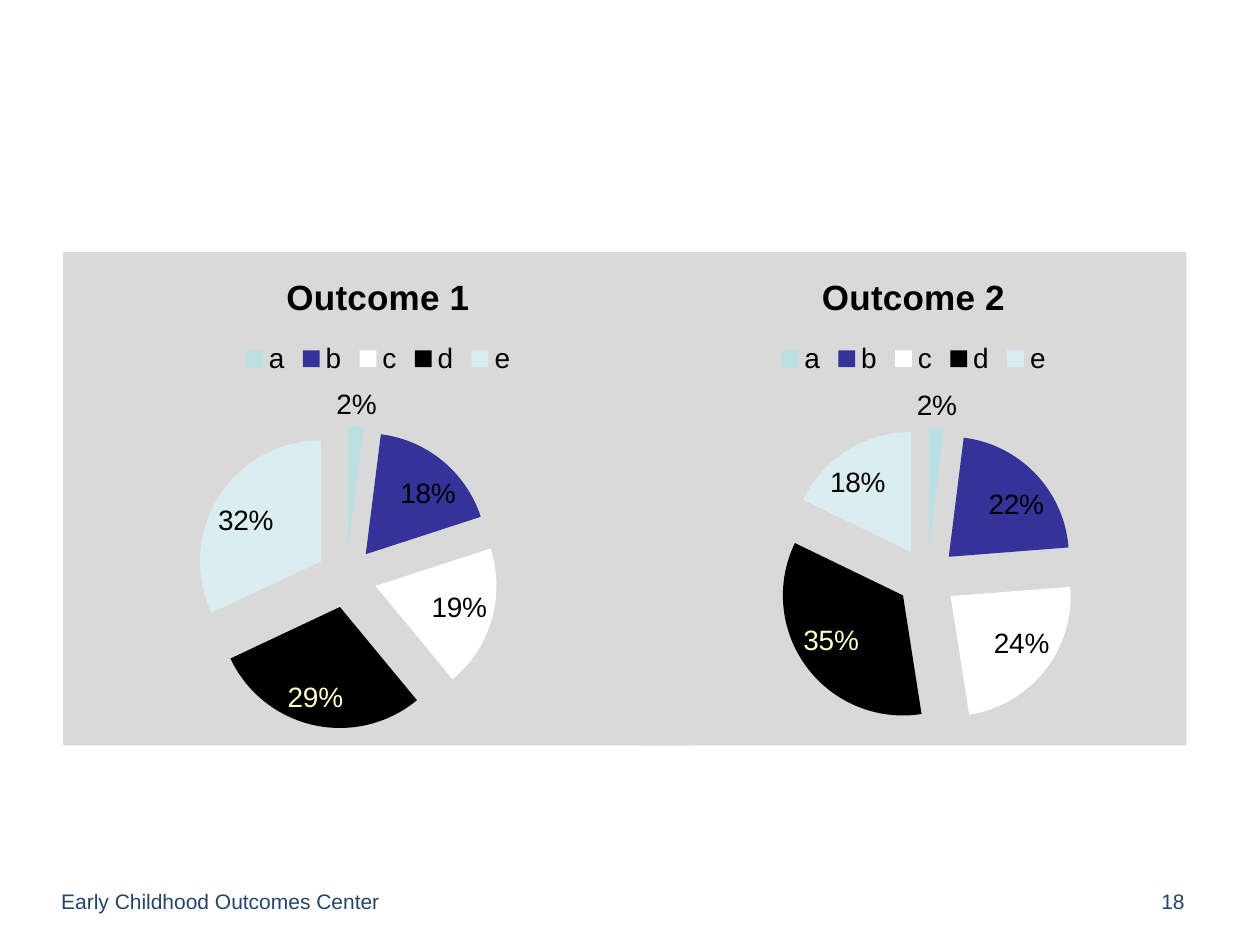
from dataclasses import dataclass

import pptx
import pptx.chart.data
import pptx.dml.color
import pptx.enum.chart
import pptx.enum.text
import pptx.oxml
import pptx.oxml.ns
import pptx.util

Pt = pptx.util.Pt
RGB = pptx.dml.color.RGBColor
Position = pptx.enum.chart.XL_LABEL_POSITION
Align = pptx.enum.text.PP_ALIGN
qn = pptx.oxml.ns.qn

FONT = "Arial"
BLACK = RGB(0x00, 0x00, 0x00)
CREAM = RGB(0xFF, 0xFF, 0xCC)
PANEL_GREY = RGB(0xD9, 0xD9, 0xD9)
FOOTER_BLUE = RGB(0x22, 0x45, 0x68)
SLICE_COLOURS = (
    RGB(0xBB, 0xE0, 0xE3),
    RGB(0x33, 0x33, 0x99),
    RGB(0xFF, 0xFF, 0xFF),
    BLACK,
    RGB(0xDA, 0xED, 0xEF),
)
CATEGORIES = ("a", "b", "c", "d", "e")
DARK_SLICE = CATEGORIES.index("d")
EXPLOSION = 25
CHART_TOP, CHART_HEIGHT = 144, 282
FOOTER_TOP, FOOTER_HEIGHT = 500.4, 28.8


@dataclass(frozen=True)
class OutcomePie:
    title: str
    left: float
    width: float
    shares: tuple[int, ...]
    plot_area: tuple[float, float, float, float]  # x, y, w, h as chart fractions


@dataclass(frozen=True)
class FooterText:
    text: str
    left: float
    width: float
    align: Align


PIES = (
    OutcomePie("Outcome 1", 36, 360, (2, 18, 19, 29, 32), (0.21, 0.35, 0.48, 0.62)),
    OutcomePie("Outcome 2", 366, 312, (2, 22, 24, 35, 18), (0.25, 0.35, 0.55, 0.62)),
)
FOOTERS = (
    FooterText("Early Childhood Outcomes Center", 12, 228, Align.CENTER),
    FooterText("18", 516, 168, Align.RIGHT),
)


def style_font(font, size: float, colour: RGB, bold: bool = False) -> None:
    font.name = FONT
    font.size = Pt(size)
    font.bold = bold
    font.color.rgb = colour


def chart_xml(body: str):
    """Parse one element whose prefix c is the chart namespace."""
    tag, rest = body.split(" ", 1)
    return pptx.oxml.parse_xml(f"{tag} {pptx.oxml.ns.nsdecls('c', 'a')} {rest}")


def place_plot_area(chart, fractions: tuple[float, ...]) -> None:
    plot_area = chart._chartSpace.chart.plotArea
    for layout in plot_area.findall(qn("c:layout")):
        plot_area.remove(layout)
    modes = "".join(f'<c:{axis}Mode val="edge"/>' for axis in "xy")
    values = "".join(f'<c:{key} val="{value}"/>' for key, value in zip("xywh", fractions))
    plot_area.insert(0, chart_xml(
        f'<c:layout ><c:manualLayout><c:layoutTarget val="inner"/>{modes}{values}'
        "</c:manualLayout></c:layout>"))


def fill_chart_panel(chart) -> None:
    chart._chartSpace.chart.addnext(chart_xml(
        f'<c:spPr ><a:solidFill><a:srgbClr val="{PANEL_GREY}"/></a:solidFill>'
        "<a:ln><a:noFill/></a:ln></c:spPr>"))


def label_point(point, colour: RGB) -> None:
    """Give one slice its own percentage label."""
    label = point.data_label
    style_font(label.font, 16, colour)
    label.position = Position.BEST_FIT
    element = label._dLbl
    element.find(qn("c:showVal")).set("val", "0")
    element.find(qn("c:showPercent")).set("val", "1")


def format_slices(series) -> None:
    for index, colour in enumerate(SLICE_COLOURS):
        slice_format = series.points[index].format
        slice_format.fill.solid()
        slice_format.fill.fore_color.rgb = colour
        slice_format.line.fill.background()
    series._element.find(qn("c:dPt")).addprevious(
        chart_xml(f'<c:explosion val="{EXPLOSION}"/>'))

    labels = series.data_labels
    labels.show_percentage = True
    labels.show_value = False
    labels.number_format = "0%"
    labels.number_format_is_linked = False
    labels.position = Position.BEST_FIT
    style_font(labels.font, 16, BLACK)
    label_point(series.points[DARK_SLICE], CREAM)


def add_pie(slide, pie: OutcomePie) -> None:
    data = pptx.chart.data.CategoryChartData(number_format="0")
    data.categories = CATEGORIES
    data.add_series("Series 1", pie.shares)
    chart = slide.shapes.add_chart(
        pptx.enum.chart.XL_CHART_TYPE.PIE,
        Pt(pie.left), Pt(CHART_TOP), Pt(pie.width), Pt(CHART_HEIGHT), data).chart
    style_font(chart.font, 10, BLACK)
    fill_chart_panel(chart)

    chart.has_title = True
    heading = chart.chart_title.text_frame.paragraphs[0]
    style_font(heading.font, 20, BLACK, bold=True)
    heading_run = heading.add_run()
    heading_run.text = pie.title
    style_font(heading_run.font, 20, BLACK, bold=True)

    chart.has_legend = True
    chart.legend.position = pptx.enum.chart.XL_LEGEND_POSITION.TOP
    chart.legend.include_in_layout = False
    style_font(chart.legend.font, 16, BLACK)

    chart.plots[0].vary_by_categories = True
    format_slices(chart.plots[0].series[0])
    place_plot_area(chart, pie.plot_area)


def add_footer(slide, footer: FooterText) -> None:
    frame = slide.shapes.add_textbox(
        Pt(footer.left), Pt(FOOTER_TOP), Pt(footer.width), Pt(FOOTER_HEIGHT)).text_frame
    frame.word_wrap = True
    frame.vertical_anchor = pptx.enum.text.MSO_ANCHOR.MIDDLE
    paragraph = frame.paragraphs[0]
    paragraph.alignment = footer.align
    run = paragraph.add_run()
    run.text = footer.text
    style_font(run.font, 12, FOOTER_BLUE)


def main() -> None:
    presentation = pptx.Presentation()
    presentation.slide_width = Pt(720)
    presentation.slide_height = Pt(540)
    slide = presentation.slides.add_slide(presentation.slide_layouts[6])
    for footer in FOOTERS:
        add_footer(slide, footer)
    for pie in PIES:
        add_pie(slide, pie)
    presentation.save("out.pptx")


if __name__ == "__main__":
    main()
